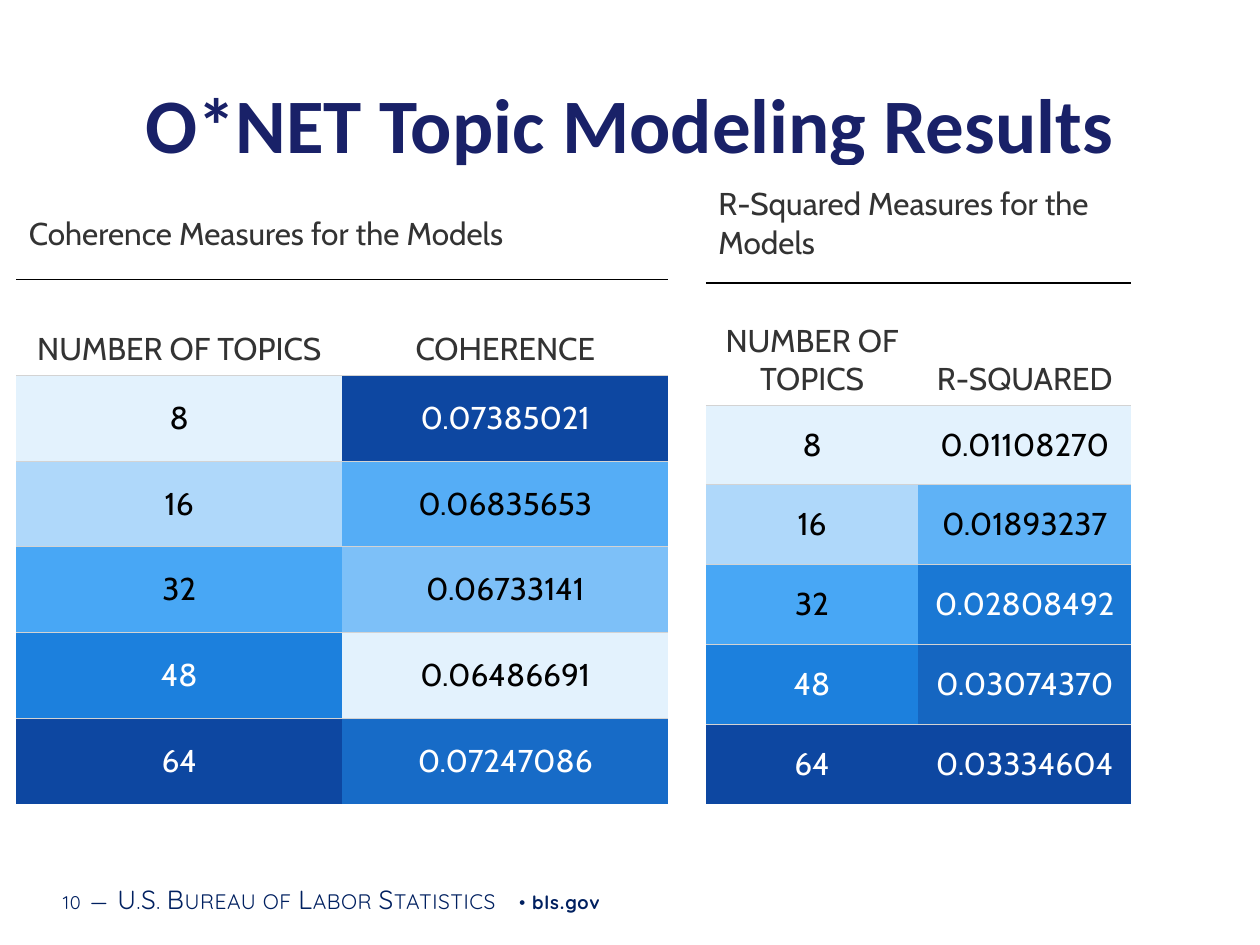
import pptx
import pptx.dml.color
import pptx.enum.text
import pptx.oxml.ns
import pptx.util
from lxml import etree

Pt = pptx.util.Pt
ALIGN = pptx.enum.text.PP_ALIGN
ANCHOR = pptx.enum.text.MSO_ANCHOR

TITLE = "O*NET Topic Modeling Results"

# Footer runs: text, size, bold, letter spacing, small caps
FOOTER = [
    ("10", 10.5, False, 0.5, False),
    (" ", 16, False, 0.5, False),
    ("—", 15, False, 0.3, True),
    (" ", 16, False, 0.5, False),
    ("U.S. Bureau of Labor Statistics", 15, False, 0.3, True),
    (" • ", 10.5, False, 0.5, False),
    ("bls.gov", 10.5, True, 0.5, False),
]

TOPICS = [("8", "E3F2FD"), ("16", "AFD8FA"), ("32", "48A7F5"),
          ("48", "1C80DD"), ("64", "0D47A1")]

RESULTS = [
    {
        "caption": "Coherence Measures for the Models",
        "measure": "COHERENCE",
        "scores": [("0.07385021", "0D47A1"), ("0.06835653", "55ADF6"),
                   ("0.06733141", "7DC0F8"), ("0.06486691", "E3F2FD"),
                   ("0.07247086", "176BC7")],
        "left": 9.3, "top": 108.5, "width": 372.6,
        "heights": [51.1, 54.9] + [49] * 5,
    },
    {
        "caption": "R-Squared Measures for the Models",
        "measure": "R-SQUARED",
        "scores": [("0.01108270", "E3F2FD"), ("0.01893237", "5FB2F6"),
                   ("0.02808492", "1A78D4"), ("0.03074370", "1566C1"),
                   ("0.03334604", "0D47A1")],
        "left": 403.3, "top": 94.1, "width": 243,
        "heights": [67.7, 69.7] + [45.6] * 5,
    },
]

CAPTION_RULE = ("000000", 1)
ROW_RULE = ("D3D3D3", 0.6)


def color(hex_code):
    return pptx.dml.color.RGBColor.from_string(hex_code)


def apply(target, formats):
    for name, value in formats.items():
        setattr(target, name, value)


def add_run(paragraph, text, size, font, ink, bold=False):
    run = paragraph.add_run()
    run.text = text
    apply(run.font, {"size": Pt(size), "name": font, "bold": bold})
    run.font.color.rgb = color(ink)
    return run


def add_text_box(slide, left, top, width, height, margin_x, margin_y):
    frame = slide.shapes.add_textbox(Pt(left), Pt(top), Pt(width), Pt(height)).text_frame
    apply(frame, {
        "word_wrap": True, "vertical_anchor": ANCHOR.MIDDLE,
        "margin_left": Pt(margin_x), "margin_right": Pt(margin_x),
        "margin_top": Pt(margin_y), "margin_bottom": Pt(margin_y),
    })
    return frame.paragraphs[0]


def set_borders(cell, above, below):
    """Draw the given rules above and below a cell, and no side borders."""
    properties = cell._tc.get_or_add_tcPr()
    qn = pptx.oxml.ns.qn
    for tag, rule in (("a:lnL", None), ("a:lnR", None), ("a:lnT", above), ("a:lnB", below)):
        line = etree.SubElement(properties, qn(tag))
        if rule is None:
            etree.SubElement(line, qn("a:noFill"))
            continue
        ink, weight = rule
        line.set("w", str(int(Pt(weight))))
        solid = etree.SubElement(line, qn("a:solidFill"))
        etree.SubElement(solid, qn("a:srgbClr")).set("val", ink)


def ink_on(fill):
    """White on the dark blues, black on the light ones."""
    return "FFFFFF" if int(fill[:2], 16) < 0x40 else "000000"


def add_results(slide, result):
    topics_and_scores = list(zip(TOPICS, result["scores"]))
    headings = (("NUMBER OF TOPICS", "FFFFFF"), (result["measure"], "FFFFFF"))
    rows = [((result["caption"], "FFFFFF"), ("", "FFFFFF")), headings] + topics_and_scores
    heights = result["heights"]
    table = slide.shapes.add_table(
        len(rows), 2, Pt(result["left"]), Pt(result["top"]),
        Pt(result["width"]), Pt(sum(heights))).table
    apply(table, {"first_row": False, "horz_banding": False})
    for column in table.columns:
        column.width = Pt(result["width"] / 2)
    table.cell(0, 0).merge(table.cell(0, 1))

    rules = [None, CAPTION_RULE] + [ROW_RULE] * len(TOPICS) + [None]
    for r, row in enumerate(rows):
        table.rows[r].height = Pt(heights[r])
        is_caption, is_heading = r == 0, r == 1
        margin_x = 7.2 if is_caption else 3
        for c, (text, fill) in enumerate(row):
            cell = table.cell(r, c)
            set_borders(cell, rules[r], rules[r + 1])
            cell.fill.solid()
            cell.fill.fore_color.rgb = color(fill)
            apply(cell, {
                "margin_left": Pt(margin_x), "margin_right": Pt(margin_x),
                "margin_top": Pt(3 if is_heading else 2),
                "margin_bottom": Pt(3.75 if is_heading else 2),
                "vertical_anchor": ANCHOR.BOTTOM if is_heading else ANCHOR.MIDDLE,
            })
            if text:
                paragraph = cell.text_frame.paragraphs[0]
                paragraph.alignment = ALIGN.LEFT if is_caption else ALIGN.CENTER
                add_run(paragraph, text, 18, "Cabin", "333333" if r < 2 else ink_on(fill))


def main():
    deck = pptx.Presentation()
    apply(deck, {"slide_width": Pt(720), "slide_height": Pt(540)})
    slide = deck.slides.add_slide(deck.slide_layouts[6])

    footer = add_text_box(slide, 31, 499, 455.8, 28.8, 5, 2.9)
    for text, size, bold, spacing, small_caps in FOOTER:
        run = add_run(footer, text, size, "Quicksand", "002060", bold)
        run_properties = run.font._element
        run_properties.set("spc", str(round(spacing * 100)))
        if small_caps:
            run_properties.set("cap", "small")

    title = add_text_box(slide, 36, 38.2, 648, 63.4, 7.2, 3.6)
    title.alignment = ALIGN.CENTER
    add_run(title, TITLE, 44, "Calibri", "192168", bold=True)

    for result in RESULTS:
        add_results(slide, result)
    deck.save("out.pptx")


if __name__ == "__main__":
    main()
